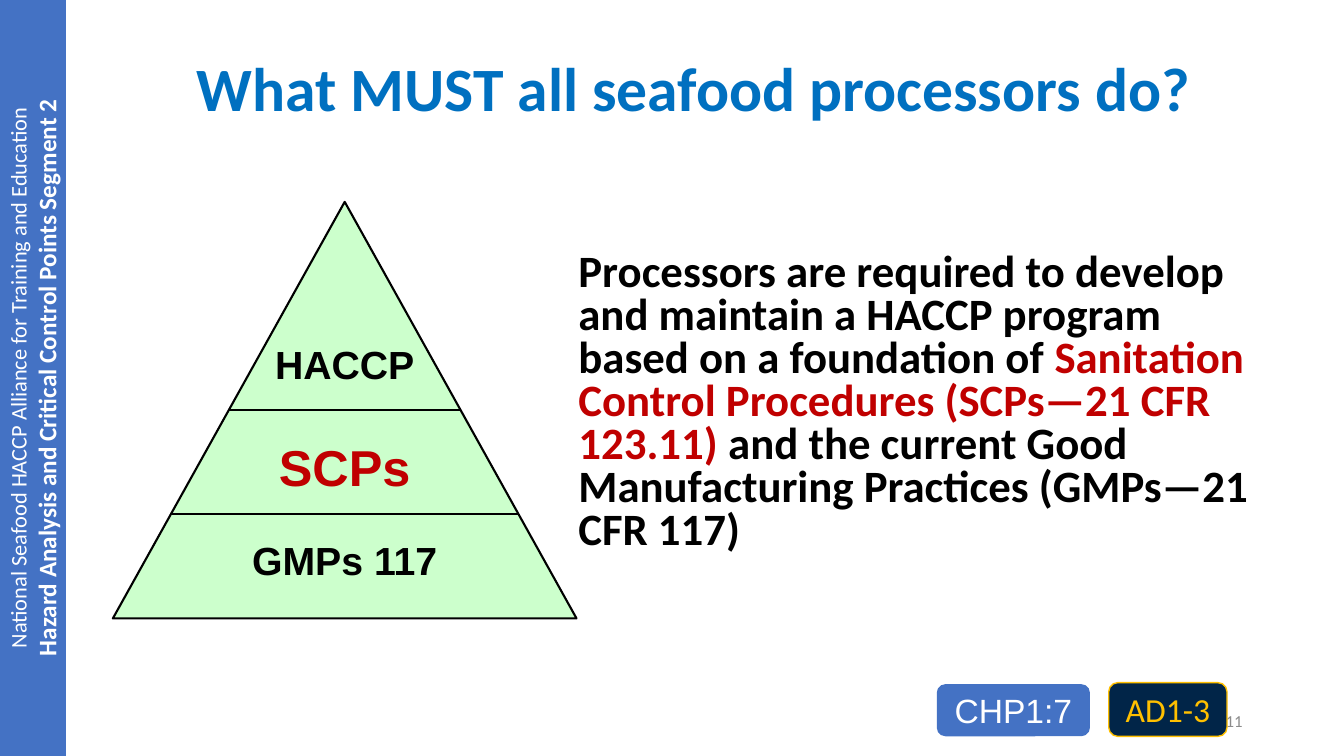
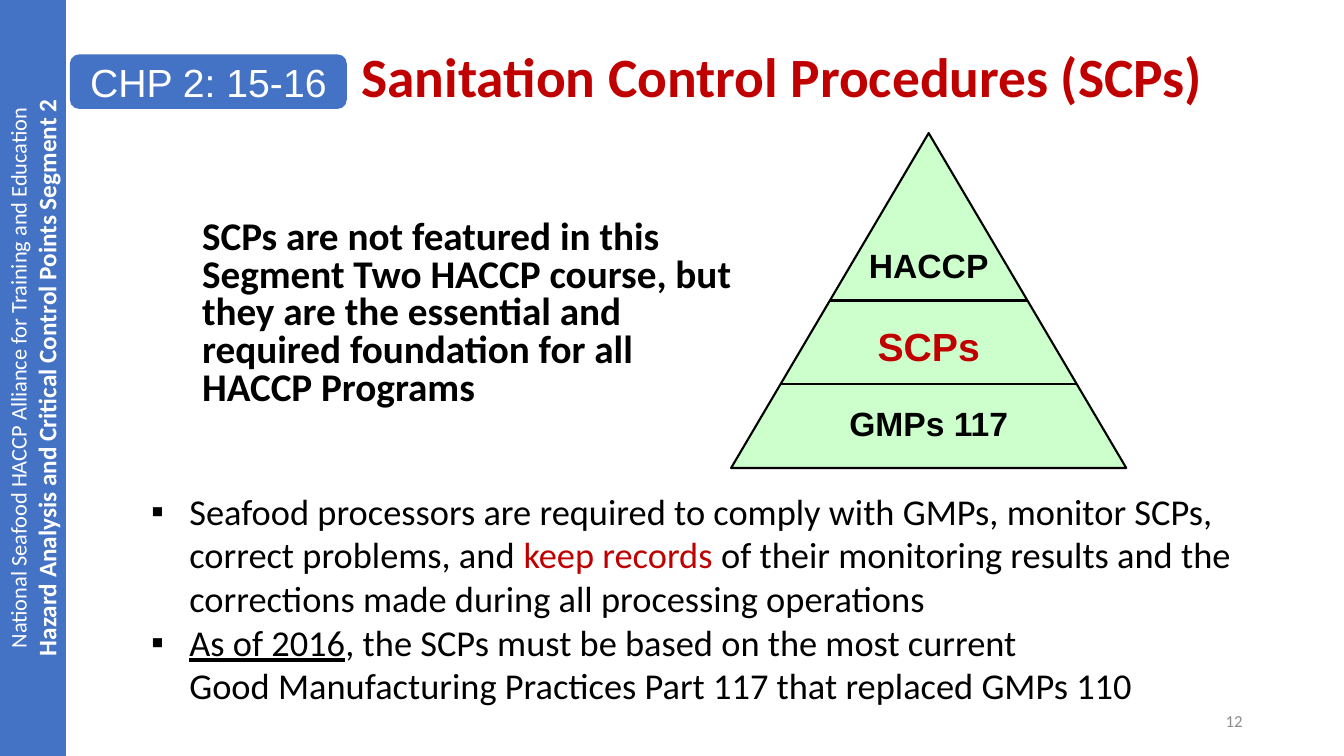
from lxml.etree import SubElement
from pptx import Presentation
from pptx.dml.color import RGBColor
from pptx.enum.shapes import MSO_CONNECTOR, MSO_SHAPE
from pptx.enum.text import MSO_ANCHOR, PP_ALIGN
from pptx.oxml.ns import qn
from pptx.util import Inches, Pt

W, H = Inches(40 / 3), Inches(7.5)
COLORS = {
    "blue": "4472C4", "title": "0070C0", "red": "C00000", "green": "CCFFCC",
    "navy": "012548", "gold": "FFC000", "gray": "8C8C8C",
    "black": "000000", "white": "FFFFFF",
}


def rgb(name):
    """Return the named colour."""
    return RGBColor.from_string(COLORS[name])


def place(x, y, w, h):
    """Turn percentages of the slide's size into lengths."""
    return int(W * x / 100), int(H * y / 100), int(W * w / 100), int(H * h / 100)


def add_bullet(p, indent=0.38):
    """Give a paragraph a square bullet with a hanging indent."""
    pPr = p._p.get_or_add_pPr()
    pPr.set("marL", str(Inches(indent)))
    pPr.set("indent", str(-Inches(indent)))
    SubElement(pPr, qn("a:buFont")).set("typeface", "Arial")
    SubElement(pPr, qn("a:buChar")).set("char", "▪")


def add_run(p, text, size=24, font="Calibri", color="black", bold=False, underline=False):
    """Add formatted text to a paragraph, with a line break at each newline."""
    for i, line in enumerate(text.split("\n")):
        if i:
            p.add_line_break()
        r = p.add_run()
        r.text = line
        r.font.size, r.font.name = Pt(size), font
        r.font.bold, r.font.underline = bold, underline
        r.font.color.rgb = rgb(color)


def write(tf, *paras, align=PP_ALIGN.LEFT, anchor=MSO_ANCHOR.TOP, spacing=None,
          bullet=False, **fmt):
    """Fill a text frame with paragraphs, each a string or a list of (text, changes)."""
    tf.word_wrap, tf.vertical_anchor = True, anchor
    for i, para in enumerate(paras):
        p = tf.add_paragraph() if i else tf.paragraphs[0]
        if bullet:
            add_bullet(p)
        p.alignment = align
        if spacing:
            p.line_spacing = spacing
        for text, changes in [(para, {})] if isinstance(para, str) else para:
            add_run(p, text, **{**fmt, **changes})


def add_text(shapes, box, *paras, **fmt):
    """Add a text box."""
    write(shapes.add_textbox(*box).text_frame, *paras, **fmt)


def add_block(shapes, kind, box, fill, line=None, width=1):
    """Add a filled preset shape, outlined if a line colour is given."""
    sp = shapes.add_shape(kind, *box)
    sp.shadow.inherit = False
    sp.fill.solid()
    sp.fill.fore_color.rgb = rgb(fill)
    if line:
        sp.line.color.rgb, sp.line.width = rgb(line), Pt(width)
    else:
        sp.line.fill.background()
    return sp


def add_badge(s, box, text, fill="blue", line=None, **fmt):
    """Add a rounded page reference."""
    tf = add_block(s.shapes, MSO_SHAPE.ROUNDED_RECTANGLE, box, fill, line).text_frame
    tf.margin_top = tf.margin_bottom = 0
    write(tf, text, align=PP_ALIGN.CENTER, anchor=MSO_ANCHOR.MIDDLE, **fmt)


def add_pyramid(s, box, small, large):
    """Add the three-level pyramid with its dividers and labels."""
    x, y, w, h = box
    shapes = s.shapes.add_group_shape().shapes
    add_block(shapes, MSO_SHAPE.ISOSCELES_TRIANGLE, box, "green", "black", 1.5)
    for level in (0.75, 0.5):
        left, right = (int(x + w * (1 + side * level) / 2) for side in (-1, 1))
        top = int(y + h * level)
        line = shapes.add_connector(MSO_CONNECTOR.STRAIGHT, left, top, right, top)
        line.line.color.rgb, line.line.width = rgb("black"), Pt(1.5)
        SubElement(line._element.spPr, qn("a:effectLst"))
    labels = (("HACCP", 0.32, 0.41, small, "black"),
              ("SCPs", 0.55, 0.41, large, "red"),
              ("GMPs 117", 0.79, 0.69, small, "black"))
    for text, top, share, size, color in labels:
        label = int(x + w * (1 - share) / 2), int(y + h * top), int(w * share), int(h * 0.15)
        add_text(shapes, label, text, align=PP_ALIGN.CENTER, font="Arial",
                 size=size, color=color, bold=True)


def add_slide(prs, number, title, box, **fmt):
    """Add a blank slide with the side band, title and slide number."""
    s = prs.slides.add_slide(prs.slide_layouts[6])
    tf = add_block(s.shapes, MSO_SHAPE.RECTANGLE, place(0, 0, 4.9, 100), "blue").text_frame
    tf.margin_left = tf.margin_right = tf.margin_top = tf.margin_bottom = 0
    tf._txBody.bodyPr.set("vert", "vert270")
    write(tf, "National Seafood HACCP Alliance for Training and Education",
          [("Hazard Analysis and Critical Control Points Segment 2", {"size": 18, "bold": True})],
          align=PP_ALIGN.CENTER, anchor=MSO_ANCHOR.MIDDLE, size=16, color="white")
    add_text(s.shapes, box, title, align=PP_ALIGN.CENTER, anchor=MSO_ANCHOR.MIDDLE,
             spacing=0.9, bold=True, **fmt)
    add_text(s.shapes, place(70.7, 92.7, 22.5, 5.3), str(number), align=PP_ALIGN.RIGHT,
             anchor=MSO_ANCHOR.MIDDLE, size=12, color="gray")
    return s


def add_requirements(prs):
    """Build the slide on what processors must do."""
    s = add_slide(prs, 11, "What MUST all seafood processors do?",
                  place(8.3, 3.7, 86.7, 16.7), size=44, color="title")
    add_pyramid(s, place(8.4, 26.7, 34.5, 55.1), 28, 36)
    add_text(s.shapes, place(42.3, 32.8, 52.7, 41.7), [
        ("Processors are required to develop \nand maintain a HACCP program "
         "based on a foundation of ", {}),
        ("Sanitation Control Procedures (SCPs—21 CFR 123.11) ", {"color": "red"}),
        ("and the current Good Manufacturing Practices (GMPs—21 CFR 117)", {}),
    ], spacing=0.8, size=32, bold=True)
    add_badge(s, place(82.5, 90.3, 8.8, 7.1), "AD1-3", "navy", "gold", color="gold")
    add_badge(s, place(69.7, 90.5, 11.4, 6.9), "CHP1:7", font="Arial", color="white")


def add_procedures(prs):
    """Build the slide on sanitation control procedures."""
    s = add_slide(prs, 12, "Sanitation Control Procedures (SCPs) ",
                  place(23, 5.5, 71.3, 10), size=39.6, color="red")
    add_pyramid(s, place(54.4, 17.6, 29.4, 44.3), 24, 28)
    add_text(s.shapes, place(10.5, 64, 84.4, 34), [
        ("Seafood processors are required to comply with GMPs, monitor SCPs, "
         "correct problems, and ", {}),
        ("keep records ", {"color": "red"}),
        ("of their monitoring results and the corrections made during "
         "all processing operations", {}),
    ], [
        ("As of 2016", {"underline": True}),
        (", the SCPs must be based on the most current \n"
         "Good Manufacturing Practices Part 117 that replaced GMPs 110", {}),
    ], bullet=True, size=26)
    add_text(s.shapes, place(14.3, 28.5, 42.5, 26.5),
             "SCPs are not featured in this \nSegment Two HACCP course, but \n"
             "they are the essential and \nrequired foundation for all \nHACCP Programs",
             spacing=0.8, size=28, bold=True)
    add_badge(s, place(5.2, 7.2, 20.6, 7.2), "CHP 2: 15-16", size=28, font="Arial", color="white")


def main():
    """Build and save the presentation."""
    prs = Presentation()
    prs.slide_width, prs.slide_height = W, H
    add_requirements(prs)
    add_procedures(prs)
    prs.save("out.pptx")


if __name__ == "__main__":
    main()
